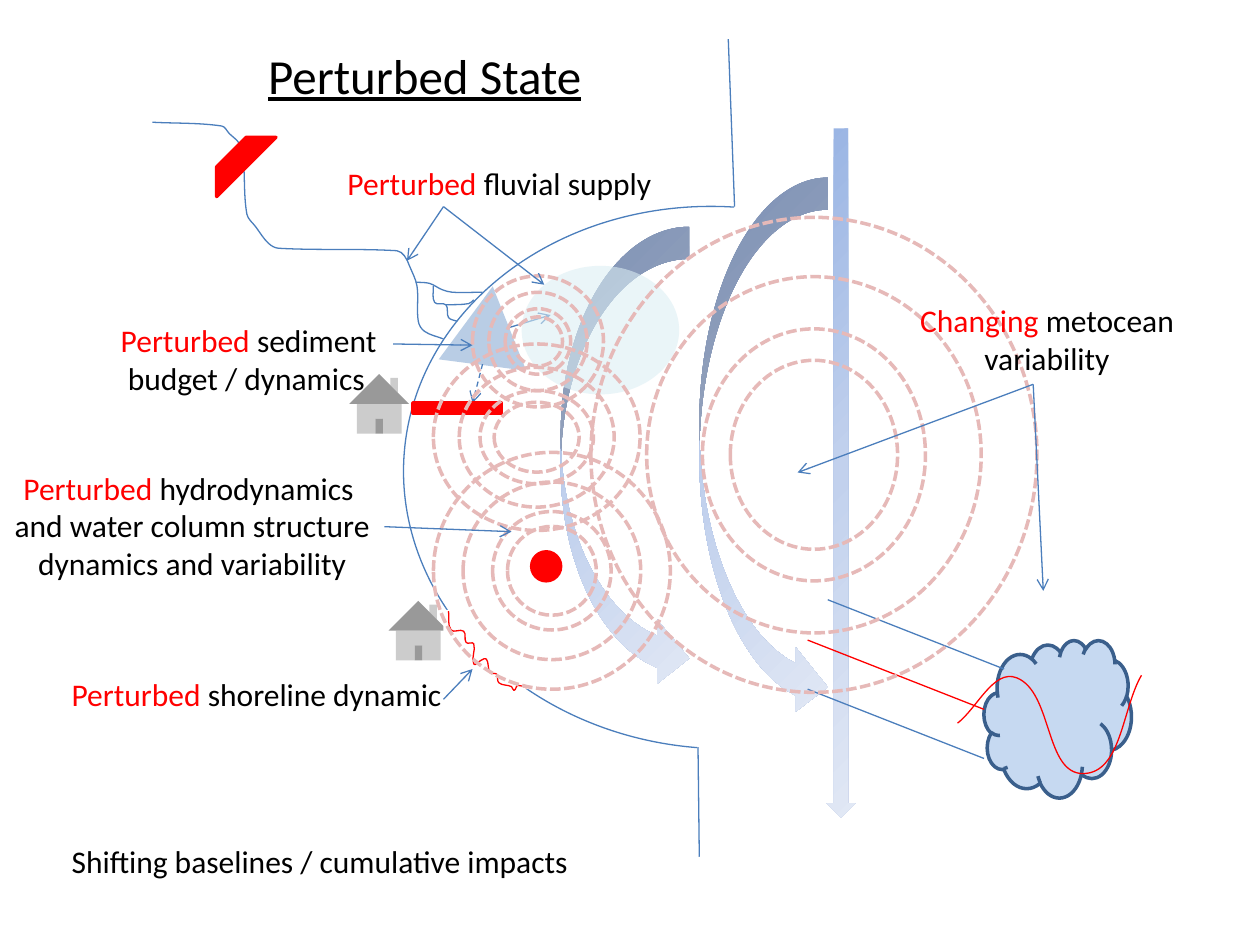
from itertools import pairwise
from math import dist
from lxml import etree
from pptx import Presentation
from pptx import util as u
from pptx.dml.color import RGBColor
from pptx.enum import dml, shapes, text
from pptx.oxml.ns import qn

HUES = {"line": "4B7EBC", "red": "FF0000", "black": "000000", "white": "FFFFFF",
        "edge": "3A5F8C", "cloud": "C6D9F1", "delta": "B9CDE5", "ring": "E6B9B8",
        "plume": "DBEEF4", "deep": "9AB5E4", "mid": "C2D1ED", "pale": "E1E8F5"}
FADE = {0: "deep", 50: "mid", 100: "pale"}
KIND = shapes.MSO_SHAPE

# Places are in inches: (left, top, width, height), or (x, y) for a point
HOMES = [(2.97, 4.69, 0.7, 0.63), (2.66, 2.89, 0.7, 0.63)]

# Coast: a round bay between two straight shores
BAY = (3.2, 1.64, 5, 4.3)
SHORES = [((5.83, 1.64), (5.78, 0.31)), ((5.54, 5.93), (5.55, 6.8))]

# Sea: fading currents, and a storm cloud whose rays all run the same way
FLOWS = [(KIND.DOWN_ARROW, (6.56, 1.02, 0.23, 5.47)),
         (KIND.CURVED_RIGHT_ARROW, (5.55, 1.41, 1.02, 4.3)),
         (KIND.CURVED_RIGHT_ARROW, (4.45, 1.8, 1.02, 3.68))]
CLOUD = (7.81, 5.08, 1.17, 1.25)
RAYS = [((7.97, 5.31), "line"), ((7.81, 6.02), "line"), ((7.81, 5.63), "red")]
REACH = (-1.4, -0.55)
WAVE = [(7.6, 5.74), (8.07, 5.38), (8.6, 6.14), (9.06, 5.36)]

# River: bends that a smooth line passes through
RIVER = [(1.21, 0.97), (1.76, 1), (1.82, 1.06), (1.9, 1.14), (1.93, 1.25), (1.96, 1.7),
         (2.03, 1.8), (2.13, 1.93), (2.21, 1.97), (3.15, 1.99), (3.21, 2.03),
         (3.25, 2.11), (3.31, 2.27), (3.32, 2.55), (3.37, 2.63), (3.52, 2.69)]
CREEKS = [[(3.44, 2.27), (3.45, 2.4), (3.54, 2.42), (3.56, 2.52), (3.63, 2.55)],
          [(3.54, 2.42), (3.72, 2.41), (3.76, 2.38)],
          [(3.3, 2.24), (3.41, 2.25), (3.51, 2.3), (3.59, 2.32), (3.83, 2.32)]]
DELTA = (3.52, 2.27, 0.7, 0.63)
PLUME = (4.14, 2.11, 1.25, 1.02)
DRIFT = [((3.83, 2.89), (3.75, 3.2), True), ((4.04, 2.6), (4.37, 2.5), False)]

# Works in red, and the worn shore that replaces part of the bay
DAM = (1.72, 1.09, 0.47, 0.47)
GROYNE = (3.28, 3.2, 0.7, 0.08)
SPOT = (4.22, 4.38, 0.23, 0.23)
PATCH = (3.52, 4.84, 0.7, 0.63)
WORN = [(3.56, 4.85), (3.58, 5), (3.68, 5.01), (3.7, 5.1), (3.76, 5.11), (3.76, 5.27),
        (3.82, 5.24), (3.86, 5.23), (3.89, 5.34), (3.94, 5.35), (3.96, 5.42),
        (4.06, 5.45), (4.08, 5.48), (4.11, 5.44), (4.18, 5.46)]

# Ripples: centre and outer size; the inner ring is a fixed share of it
RIPPLES = [((4.27, 2.71), (1.04, 1.04)), ((4.26, 3.47), (1.64, 1.48)),
           ((4.38, 4.53), (1.88, 1.88)), ((6.46, 3.61), (3.54, 3.77))]
SHARES = (0.75, 1)

# Each note: place, size, alignment, lines of (words, colour), leads (start, tips)
MID, LEFT = text.PP_ALIGN.CENTER, text.PP_ALIGN.LEFT
NOTES = [
    ((7.19, 2.34, 2.24, 0.71), 18, MID,
     [[("Changing ", "red"), ("metocean", "black")], [("variability", "black")]],
     ((8.2, 3.05), [(8.28, 4.69), (6.33, 3.75)])),
    ((0, 3.67, 3.05, 1.01), 18, MID,
     [[("Perturbed", "red"), (" hydrodynamics ", "black")],
      [("and water column structure", "black")], [("dynamics and variability", "black")]],
     ((3.05, 4.18), [(4.06, 4.22)])),
    ((0.86, 2.5, 2.25, 0.71), 18, LEFT,
     [[("Perturbed", "red"), (" sediment", "black")], [(" budget / dynamics", "black")]],
     ((3.12, 2.73), [(3.75, 2.74)])),
    ((2.66, 1.25, 2.64, 0.4), 18, LEFT,
     [[("Perturbed", "red"), (" fluvial supply", "black")]],
     ((3.52, 1.64), [(3.23, 2.07), (4.32, 2.26)])),
    ((0.47, 5.31, 3.17, 0.4), 18, LEFT,
     [[("Perturbed", "red"), (" shoreline dynamic", "black")]],
     ((3.52, 5.55), [(3.75, 5.31)])),
    ((2.03, 0.31, 2.71, 0.57), 28, LEFT, [[("Perturbed State", "black")]], None),
    ((0.47, 6.63, 4.2, 0.4), 18, LEFT,
     [[("Shifting baselines / cumulative impacts", "black")]], None)]


def cm(inch):
    return u.Cm(inch * 2.54)


def rgb(hue):
    return RGBColor.from_string(HUES[hue])


def ink(item, fill=None, line=None, width=0.75):
    """Set the fill and outline of a shape, or clear them."""
    item.shadow.inherit = False
    for paint, hue in ((item.fill, fill), (item.line.fill, line)):
        if hue:
            paint.solid()
            paint.fore_color.rgb = rgb(hue)
        else:
            paint.background()
    if line:
        item.line.width = u.Pt(width)


def shape(art, kind, box, fill=None, line=None, width=2):
    item = art.add_shape(kind, *map(cm, box))
    ink(item, fill, line, width)
    return item


def fade(item):
    """Fill with the slanted three-stop gradient of the currents."""
    item.fill.gradient()
    item.fill.gradient_angle = 315
    stops = next(item._element.iter(qn("a:gsLst")))
    stops.clear()
    for spot, hue in FADE.items():
        stop = etree.SubElement(stops, qn("a:gs"), pos=str(spot * 1000))
        etree.SubElement(stop, qn("a:srgbClr"), val=HUES[hue])


def link(art, start, end, hue="line", tip=False, dash=False):
    item = art.add_connector(shapes.MSO_CONNECTOR.STRAIGHT, *map(cm, (*start, *end)))
    item.line.color.rgb = rgb(hue)
    item.line.width = u.Pt(0.75)
    if dash:
        item.line.dash_style = dml.MSO_LINE.DASH
    if tip:
        etree.SubElement(item.line._get_or_add_ln(), qn("a:tailEnd"), type="arrow")
    etree.SubElement(item._element.spPr, qn("a:effectLst"))


def smooth(bends):
    """Add two handles per leg, a third of it long, along the line between neighbours."""
    ways = []
    for (ax, ay), (bx, by) in zip(bends[:1] + bends, bends[1:] + bends[-1:]):
        span = dist((ax, ay), (bx, by))
        ways.append(((bx - ax) / span, (by - ay) / span))
    spots = [bends[0]]
    for ((ax, ay), (awx, awy)), ((bx, by), (bwx, bwy)) in pairwise(zip(bends, ways)):
        third = dist((ax, ay), (bx, by)) / 3
        spots += [(ax + third * awx, ay + third * awy),
                  (bx - third * bwx, by - third * bwy), (bx, by)]
    return spots


def curve(art, bends, hue):
    """Draw straight legs through bends and handles, then merge each three into a Bézier."""
    first, *rest = [(cm(x), cm(y)) for x, y in smooth(bends)]
    pen = art.build_freeform(*first)
    pen.add_line_segments(rest, close=False)
    item = pen.convert_to_shape()
    ink(item, line=hue)
    legs = list(item._element.iter(qn("a:lnTo")))
    for i in range(0, len(legs), 3):
        arc = etree.Element(qn("a:cubicBezTo"))
        legs[i].addprevious(arc)
        for leg in legs[i:i + 3]:
            arc.append(leg[0])
            leg.getparent().remove(leg)


def note(art, box, size, align, lines):
    frame = art.add_textbox(*map(cm, box)).text_frame
    frame.word_wrap = False
    frame.auto_size = text.MSO_AUTO_SIZE.SHAPE_TO_FIT_TEXT
    for i, line in enumerate(lines):
        para = frame.add_paragraph() if i else frame.paragraphs[0]
        para.alignment = align
        for words, hue in line:
            run = para.add_run()
            run.text = words
            run.font.name = "Calibri"
            run.font.size = u.Pt(size)
            run.font.color.rgb = rgb(hue)
            run.font.underline = True if size > 18 else None


def coast(art):
    for box in HOMES:
        shape(art, KIND.ACTION_BUTTON_HOME, box, "white")
    group = art.add_group_shape().shapes
    bay = shape(group, KIND.ARC, BAY, None, "line", 0.75)
    bay.rotation = 184.5
    bay.adjustments[0], bay.adjustments[1] = 162, 53.33
    for start, end in SHORES:
        link(group, start, end)


def sea(art):
    for kind, box in FLOWS:
        fade(shape(art, kind, box))
    storm = art.add_group_shape().shapes
    shape(storm, KIND.CLOUD, CLOUD, "cloud", "edge")
    for (x, y), hue in RAYS:
        link(storm, (x, y), (x + REACH[0], y + REACH[1]), hue)
    curve(art, WAVE, "red")


def river(art):
    for bends in (RIVER, *CREEKS):
        curve(art, bends, "line")
    shape(art, KIND.ISOSCELES_TRIANGLE, DELTA, "delta").rotation = 7.4
    for start, end, dash in DRIFT:
        link(art, start, end, tip=True, dash=dash)


def works(art):
    shape(art, KIND.RECTANGLE, GROYNE, "red", "red")
    shape(art, KIND.RECTANGLE, PATCH, "white")
    curve(art, WORN, "red")
    shape(art, KIND.DIAGONAL_STRIPE, DAM, "red", "red")
    plume = shape(art, KIND.OVAL, PLUME, "plume")
    tint = next(plume._element.iter(qn("a:srgbClr")))
    etree.SubElement(tint, qn("a:alpha"), val="58000")
    shape(art, KIND.OVAL, SPOT, "red", "red")


def ripples(art):
    for (x, y), (wide, high) in RIPPLES:
        group = art.add_group_shape().shapes
        for share in SHARES:
            w, h = wide * share, high * share
            ring = shape(group, KIND.DONUT, (x - w / 2, y - h / 2, w, h), None, "ring")
            ring.line.dash_style = dml.MSO_LINE.SQUARE_DOT


def notes(art):
    for *words, leads in NOTES:
        note(art, *words)
        if leads:
            start, tips = leads
            for end in tips:
                link(art, start, end, tip=True)


def main():
    deck = Presentation()
    deck.slide_width, deck.slide_height = cm(10), cm(7.5)
    art = deck.slides.add_slide(deck.slide_layouts[6]).shapes
    for layer in (coast, sea, river, works, ripples, notes):
        layer(art)
    deck.save("out.pptx")


if __name__ == "__main__":
    main()
